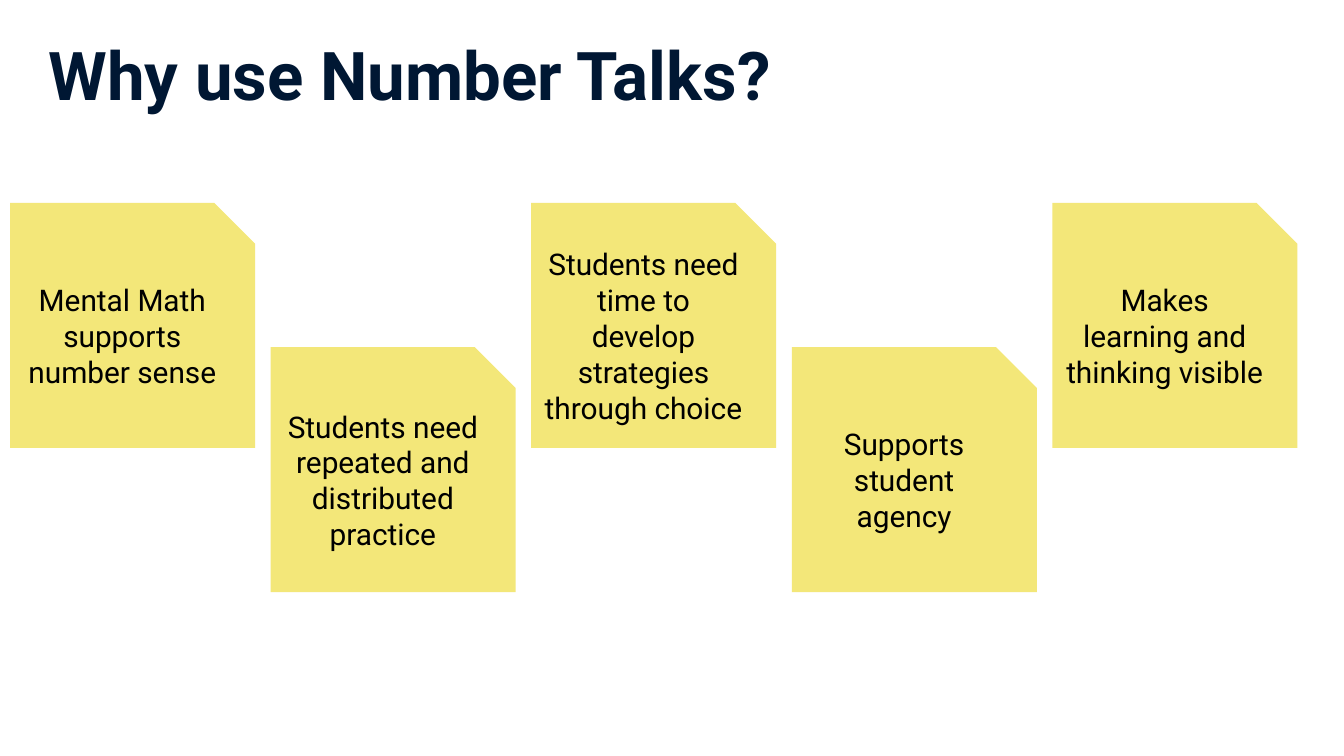
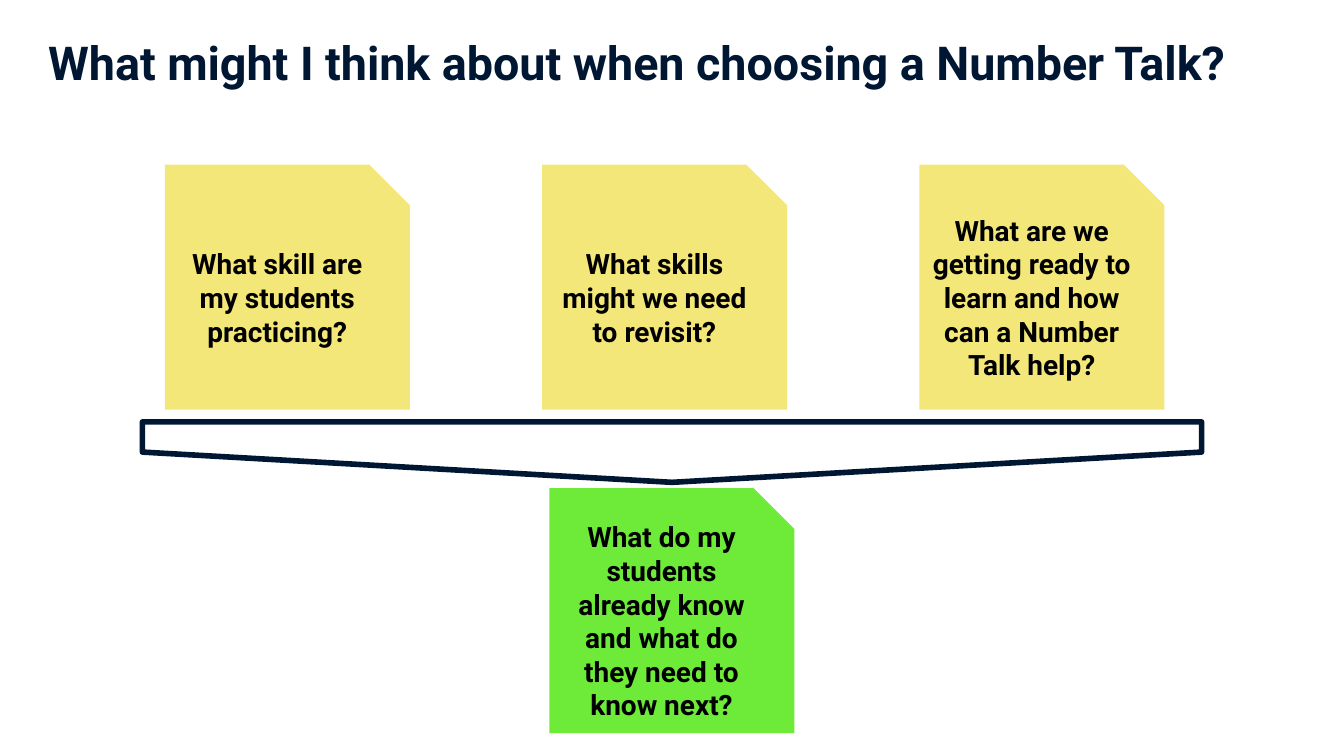
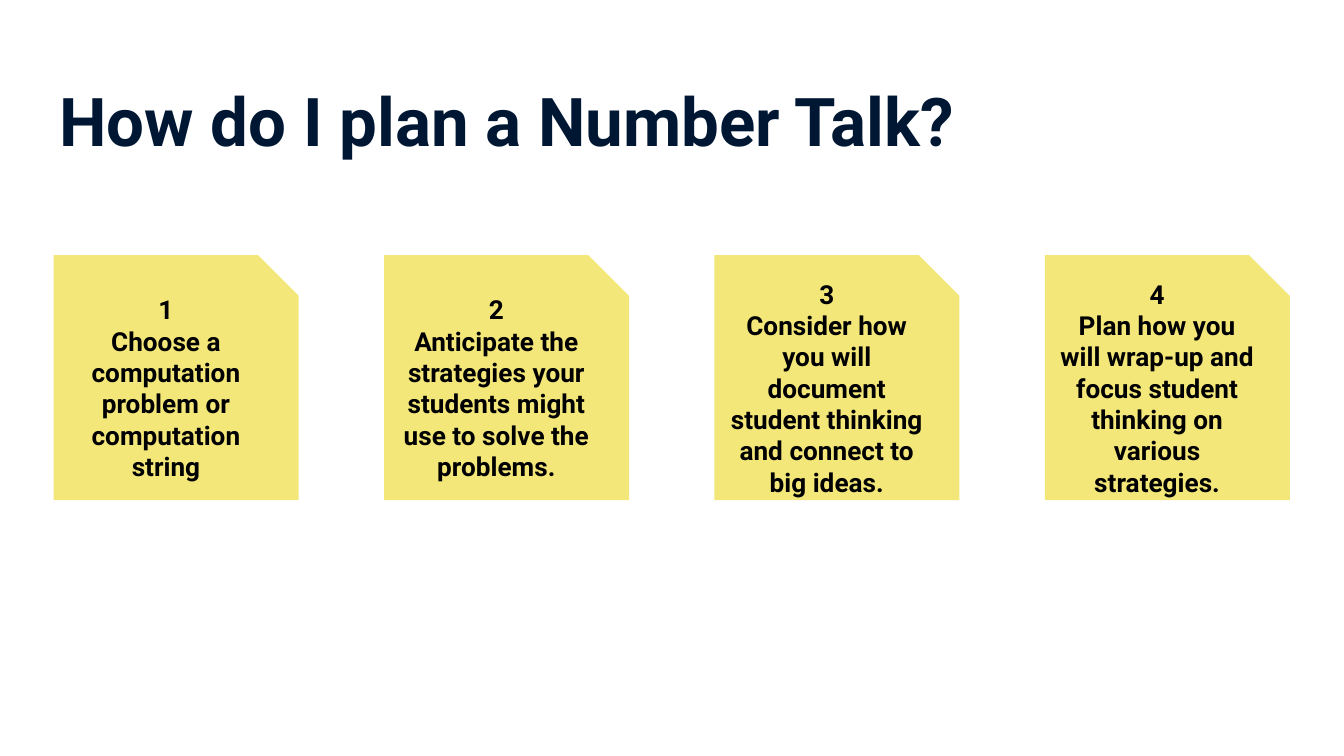
from pptx import Presentation
from pptx.dml.color import RGBColor
from pptx.enum import shapes, text
from pptx.util import Pt

COLORS = {"navy": "001733", "yellow": "F3E779", "green": "6DEB38", "black": "000000"}
FONT = "Roboto"
NOTE = 131.25  # side of a sticky note

# Content
WHY_TITLE = "Why use Number Talks?"
REASONS = [
    "Mental Math supports number sense",
    "Students need repeated and distributed practice",
    "Students need time to develop strategies through choice",
    "Supports student agency",
    "Makes learning and thinking visible",
]

CHOOSE_TITLE = "What might I think about when choosing a Number Talk?"
QUESTIONS = [
    "What skill are my students practicing?",
    "What skills might we need to revisit?",
    "What are we getting ready to learn and how can a Number Talk help?",
]
KEY_QUESTION = "What do my students already know and what do they need to know next?"

PLAN_TITLE = "How do I plan a Number Talk?"
STEPS = [
    "Choose a computation problem or computation string",
    "Anticipate the strategies your students might use to solve the problems.",
    "Consider how you will document student thinking and connect to big ideas.",
    "Plan how you will wrap-up and focus student thinking on various strategies.",
]


def color(name):
    return RGBColor.from_string(COLORS[name])


def write(shape, lines, size, ink, bold, align, anchor):
    tf = shape.text_frame
    tf.word_wrap = True
    tf.vertical_anchor = anchor
    tf.margin_left = tf.margin_right = tf.margin_top = tf.margin_bottom = Pt(7.2)
    for i, line in enumerate(lines):
        p = tf.paragraphs[0] if i == 0 else tf.add_paragraph()
        p.alignment = align
        r = p.add_run()
        r.text = line
        r.font.name, r.font.size, r.font.bold = FONT, Pt(size), bold
        r.font.color.rgb = color(ink)


def add_slide(prs, title, size=36, left=18.75, top=10.8):
    s = prs.slides.add_slide(prs.slide_layouts[6])
    box = s.shapes.add_textbox(Pt(left), Pt(top), Pt(671), Pt(45.4))
    write(box, [title], size, "navy", True, text.PP_ALIGN.LEFT, text.MSO_ANCHOR.TOP)
    return s


def add_note(s, lines, left, top, size, bold=True, fill="yellow"):
    sp = s.shapes.add_shape(shapes.MSO_SHAPE.SNIP_1_RECTANGLE,
                            Pt(left), Pt(top), Pt(NOTE), Pt(NOTE))
    sp.shadow.inherit = False
    sp.fill.solid()
    sp.fill.fore_color.rgb = color(fill)
    sp.line.fill.background()
    write(sp, lines, size, "black", bold, text.PP_ALIGN.CENTER, text.MSO_ANCHOR.MIDDLE)


def add_pointer(s, center_x, center_y, span, depth):
    """Outlined pentagon turned to point down."""
    sp = s.shapes.add_shape(shapes.MSO_SHAPE.PENTAGON,
                            Pt(center_x - depth / 2), Pt(center_y - span / 2),
                            Pt(depth), Pt(span))
    sp.rotation = 90
    sp.shadow.inherit = False
    sp.fill.background()
    sp.line.color.rgb = color("navy")
    sp.line.width = Pt(3)


def main():
    prs = Presentation()
    prs.slide_width, prs.slide_height = Pt(720), Pt(405)

    # Reasons, alternating between two rows
    s = add_slide(prs, WHY_TITLE)
    for i, reason in enumerate(REASONS):
        add_note(s, [reason], 5.4 + 139.6 * i, (108.75, 186)[i % 2], 16, bold=False)

    # Questions that lead down to the key question
    s = add_slide(prs, CHOOSE_TITLE, size=25)
    for i, question in enumerate(QUESTIONS):
        add_note(s, [question], 88.4 + 202.1 * i, 88.2, 15)
    add_note(s, [KEY_QUESTION], 294.3, 261.5, 15, fill="green")
    add_pointer(s, 360, 242.2, 567.4, 32.4)

    # Numbered planning steps
    s = add_slide(prs, PLAN_TITLE, left=24.6, top=35.3)
    for i, step in enumerate(STEPS):
        add_note(s, [str(i + 1), step], 28.8 + 177 * i, 136.7, 14)

    prs.save("out.pptx")


if __name__ == "__main__":
    main()
